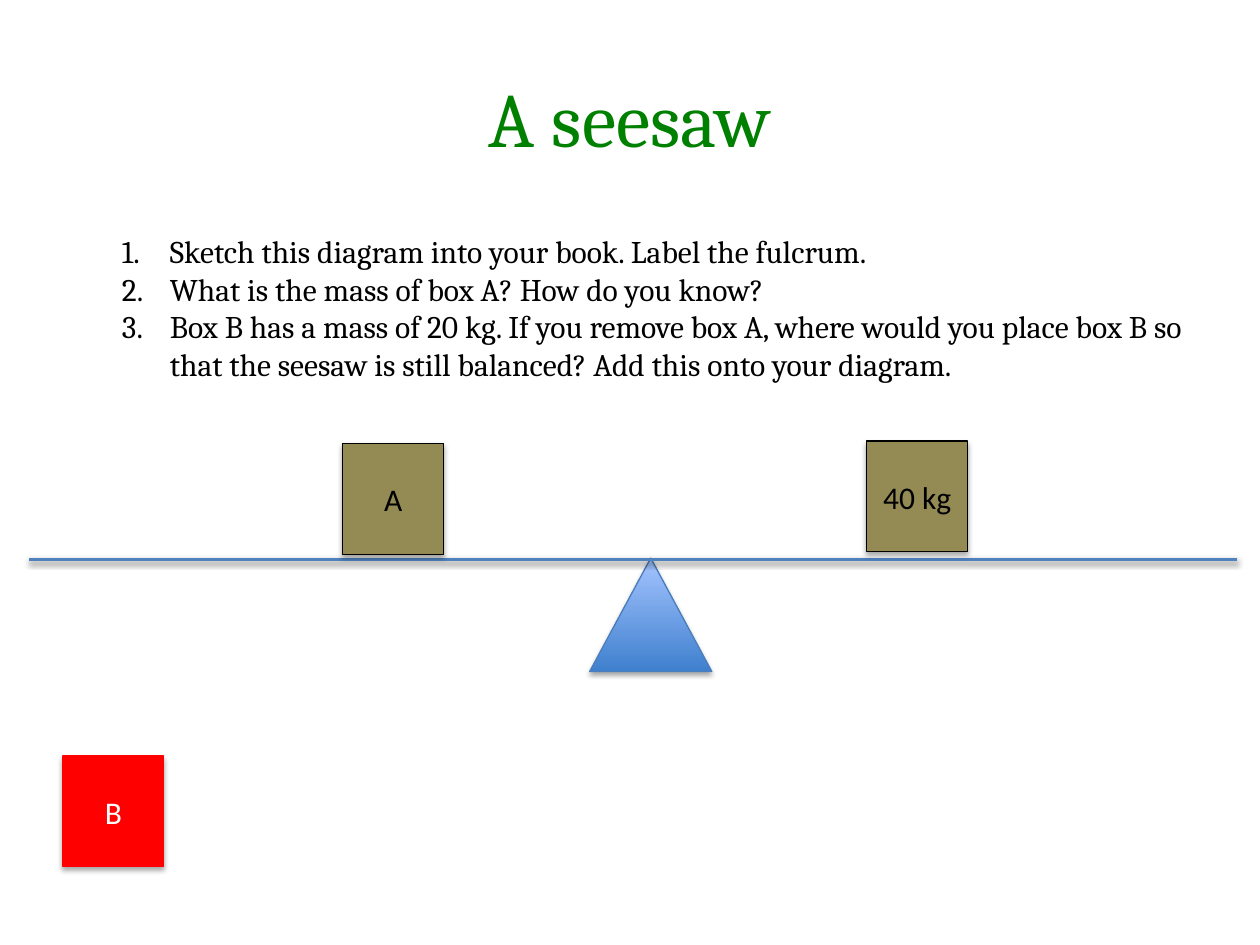
from dataclasses import dataclass

from lxml import etree
from pptx import Presentation
from pptx.dml.color import RGBColor
from pptx.enum.shapes import MSO_CONNECTOR, MSO_SHAPE
from pptx.enum.text import MSO_ANCHOR, PP_ALIGN
from pptx.oxml.ns import qn
from pptx.util import Emu, Pt

RECT, TRIANGLE = MSO_SHAPE.RECTANGLE, MSO_SHAPE.ISOSCELES_TRIANGLE
STRAIGHT = MSO_CONNECTOR.STRAIGHT
CENTER, LEFT = PP_ALIGN.CENTER, PP_ALIGN.LEFT
MIDDLE, TOP = MSO_ANCHOR.MIDDLE, MSO_ANCHOR.TOP
PX = 9144  # 100 px to the inch


@dataclass(frozen=True)
class Theme:
    black: RGBColor = RGBColor.from_string("000000")
    white: RGBColor = RGBColor.from_string("FFFFFF")
    green: RGBColor = RGBColor.from_string("008000")
    olive: RGBColor = RGBColor.from_string("948A54")
    red: RGBColor = RGBColor.from_string("FF0000")
    beam: RGBColor = RGBColor.from_string("4F81BD")
    edge: RGBColor = RGBColor.from_string("4B7EBC")
    deep: RGBColor = RGBColor.from_string("3F80CE")
    pale: RGBColor = RGBColor.from_string("A4C4FF")
    serif: str = "Cambria"
    sans: str = "Calibri"
    title: int = 44
    body: int = 18


T = Theme()


def write(tf, *lines, font=T.sans, size=T.body, color=T.black,
          align=CENTER, anchor=MIDDLE, numbered=False):
    tf.word_wrap = True
    tf.vertical_anchor = anchor
    for i, text in enumerate(lines):
        p = tf.paragraphs[0] if i == 0 else tf.add_paragraph()
        p.alignment = align
        if numbered:
            pPr = p._p.get_or_add_pPr()
            pPr.set("marL", str(38 * PX))
            pPr.set("indent", str(-38 * PX))
            etree.SubElement(pPr, qn("a:buFont"), typeface="+mj-lt")
            etree.SubElement(pPr, qn("a:buAutoNum"), type="arabicPeriod")
        r = p.add_run()
        r.text = text
        r.font.name, r.font.size, r.font.color.rgb = font, Pt(size), color


def add_shadow(s, alpha=35, distance=1.8):
    """Put a soft downward shadow on a shape or connector whose line is set."""
    effects = etree.SubElement(s._element.spPr, qn("a:effectLst"))
    shadow = etree.SubElement(effects, qn("a:outerShdw"), blurRad=str(Pt(3.1)),
                              dist=str(Pt(distance)), dir="5400000", rotWithShape="0")
    color = etree.SubElement(shadow, qn("a:srgbClr"), val=str(T.black))
    etree.SubElement(color, qn("a:alpha"), val=str(alpha * 1000))


prs = Presentation()
prs.slide_width, prs.slide_height = Emu(1000 * PX), Emu(750 * PX)
slide = prs.slides.add_slide(prs.slide_layouts[5])
shapes = slide.shapes

title = shapes.title
title.left, title.top, title.width, title.height = (Emu(v * PX) for v in (50, 30, 900, 125))
write(title.text_frame, "A seesaw", font=T.serif, size=T.title, color=T.green)

questions = shapes.add_textbox(*(Emu(v * PX) for v in (87, 179, 863, 131)))
write(questions.text_frame,
      "Sketch this diagram into your book. Label the fulcrum.",
      "What is the mass of box A? How do you know?",
      "Box B has a mass of 20 kg. If you remove box A, where would you place box B so "
      "that the seesaw is still balanced? Add this onto your diagram.",
      font=T.serif, align=LEFT, anchor=TOP, numbered=True)

fulcrum = shapes.add_shape(TRIANGLE, *(Emu(v * PX) for v in (468, 443, 97, 90)))
fulcrum.fill.gradient()
fulcrum.fill.gradient_angle = 90
for stop, color, position in zip(fulcrum.fill.gradient_stops, (T.deep, T.pale), (0, 1)):
    stop.color.rgb, stop.position = color, position
fulcrum.line.color.rgb, fulcrum.line.width = T.edge, Pt(0.75)
add_shadow(fulcrum)

beam = shapes.add_connector(STRAIGHT, *(Emu(v * PX) for v in (23, 444, 982, 444)))
beam.line.color.rgb, beam.line.width = T.beam, Pt(2)
add_shadow(beam, alpha=38, distance=1.6)

boxes = [
    ("40 kg", 688, 350, T.olive, T.black, T.black),
    ("A", 272, 352, T.olive, T.black, T.black),
    ("B", 50, 600, T.red, T.red, T.white),
]
for label, x, y, fill, edge, color in boxes:
    box = shapes.add_shape(RECT, *(Emu(v * PX) for v in (x, y, 80, 88)))
    box.fill.solid()
    box.fill.fore_color.rgb = fill
    box.line.color.rgb, box.line.width = edge, Pt(0.75)
    add_shadow(box)
    write(box.text_frame, label, color=color)

prs.save("out.pptx")
